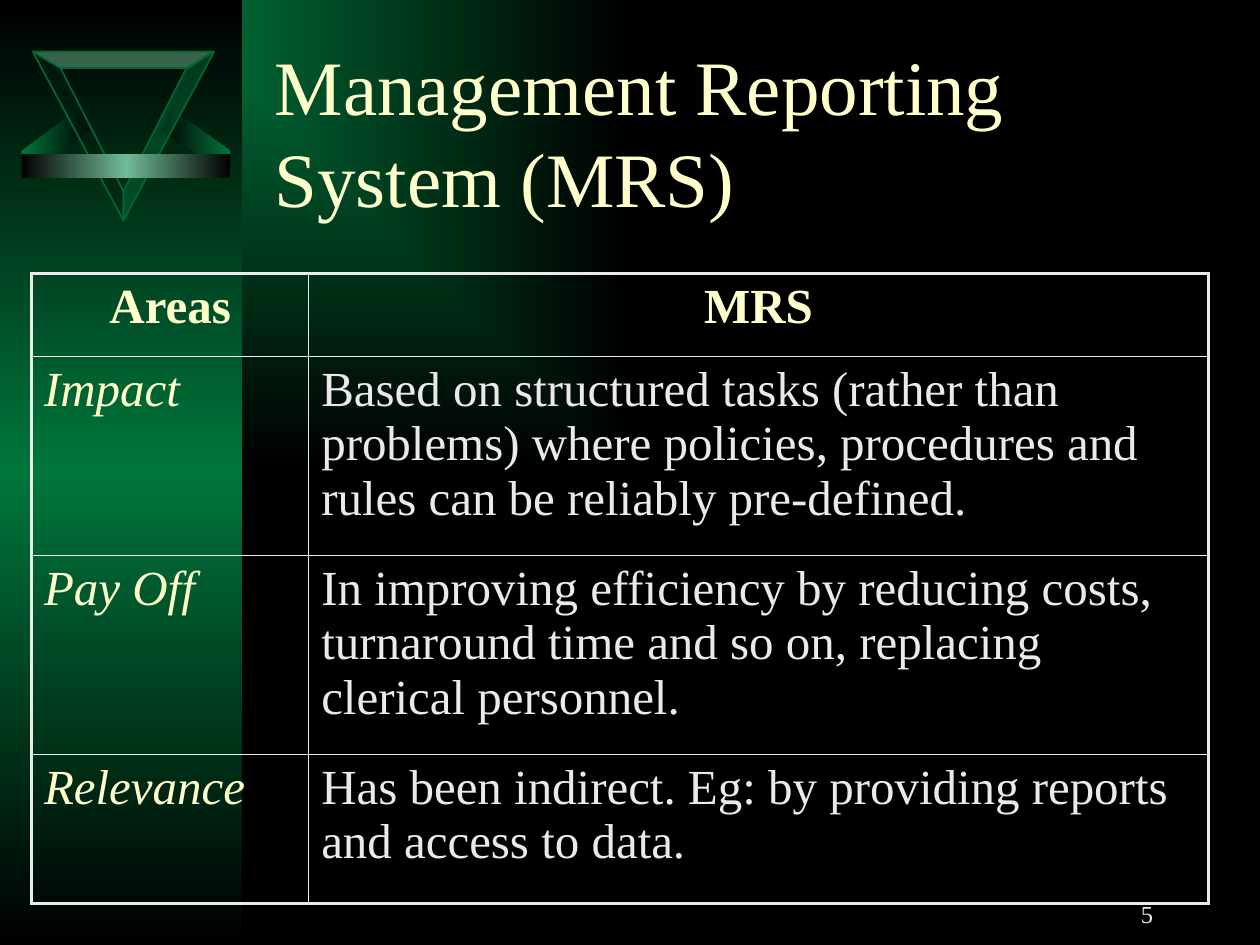
import dataclasses

import lxml.etree
import pptx
import pptx.dml.color
import pptx.enum.shapes
import pptx.enum.text
import pptx.oxml
import pptx.oxml.ns
import pptx.util

Inches = pptx.util.Inches
Pt = pptx.util.Pt
ALIGN = pptx.enum.text.PP_ALIGN
ANCHOR = pptx.enum.text.MSO_ANCHOR


@dataclasses.dataclass(frozen=True)
class Theme:
    font: str = "Times New Roman"
    black: str = "000000"
    green: str = "00763B"
    edge: str = "006633"
    shade: str = "002010"
    mint: str = "71BB96"
    cream: str = "FFFFCC"
    pale: str = "EAEAEA"
    title_size: int = 44
    table_size: int = 28
    number_size: int = 14
    frame_width: float = 2.25
    rule_width: float = 1


def rgb(color):
    return pptx.dml.color.RGBColor.from_string(color)


def mirror(points, axis):
    return [(round(2 * axis - x, 2), y) for x, y in points]


def set_gradient(solid, colors, direction):
    """Replace a solidFill element by evenly spaced colour stops."""
    step = 100000 // (len(colors) - 1)
    stops = "".join(
        f'<a:gs pos="{i * step}"><a:srgbClr val="{c}"/></a:gs>'
        for i, c in enumerate(colors)
    )
    solid.getparent().replace(solid, pptx.oxml.parse_xml(
        f'<a:gradFill {pptx.oxml.ns.nsdecls("a")} rotWithShape="1">'
        f"<a:gsLst>{stops}</a:gsLst>{direction}</a:gradFill>"
    ))


class Deck:
    """Holds the theme, the presentation and the current slide."""

    def __init__(self, theme):
        self.theme = theme
        self.prs = pptx.Presentation()
        self.prs.slide_width = Inches(10)
        self.prs.slide_height = Inches(7.5)
        self.s = self.prs.slides.add_slide(self.prs.slide_layouts[5])

    def background(self, colors):
        self.s.background.fill.solid()
        solid = self.s.element.xpath(".//p:bgPr/a:solidFill")[0]
        set_gradient(solid, colors, '<a:path path="rect">'
                     '<a:fillToRect r="100000" b="100000"/></a:path>')

    def add_text(self, tf, text, size, color, align=ALIGN.LEFT, bold=False, italic=False):
        p = tf.paragraphs[0]
        p.alignment = align
        r = p.add_run()
        r.text = text
        r.font.name = self.theme.font
        r.font.size = Pt(size)
        r.font.color.rgb = rgb(color)
        r.font.bold = bold
        r.font.italic = italic

    def paint_gradient(self, sp, colors, angle):
        sp.shadow.inherit = False
        sp.line.fill.background()
        sp.fill.solid()
        set_gradient(sp.element.spPr.find(pptx.oxml.ns.qn("a:solidFill")), colors,
                     f'<a:lin ang="{angle * 60000}" scaled="0"/>')

    def gradient_bar(self, shapes, box, colors, angle=0):
        sp = shapes.add_shape(pptx.enum.shapes.MSO_SHAPE.RECTANGLE,
                              *(Inches(v) for v in box))
        self.paint_gradient(sp, colors, angle)

    def outline(self, shapes, points):
        first, *rest = [(Inches(x), Inches(y)) for x, y in points]
        builder = shapes.build_freeform(*first)
        builder.add_line_segments(rest, close=True)
        return builder.convert_to_shape()

    def wing(self, shapes, points, colors):
        self.paint_gradient(self.outline(shapes, points), colors, 0)

    def glass(self, shapes, points, color):
        """Add a half-transparent facet with a thin edge."""
        sp = self.outline(shapes, points)
        sp.shadow.inherit = False
        sp.fill.solid()
        sp.fill.fore_color.rgb = rgb(color)
        clr = sp.element.spPr.xpath("./a:solidFill/a:srgbClr")[0]
        lxml.etree.SubElement(clr, pptx.oxml.ns.qn("a:alpha"), val="50000")
        sp.line.color.rgb = rgb(self.theme.edge)
        sp.line.width = Pt(1)

    def emblem(self):
        t = self.theme
        shapes = self.s.shapes.add_group_shape().shapes
        wing = [(0.17, 1.2), (0.17, 1.41), (0.72, 1.03), (0.72, 1.05), (0.64, 0.86)]
        side = [(0.98, 1.75), (0.98, 1.52), (0.48, 0.54), (0.26, 0.41)]
        top = [(0.26, 0.41), (0.48, 0.54), (1.5, 0.54), (1.69, 0.41)]
        self.wing(shapes, mirror(wing, 1), (t.black, t.green))
        self.wing(shapes, wing, (t.green, t.black))
        self.glass(shapes, side, t.shade)
        self.glass(shapes, top, t.mint)
        self.glass(shapes, mirror(side, 0.98), t.edge)
        self.gradient_bar(shapes, (0.17, 1.22, 1.66, 0.19), (t.black, t.mint, t.black))

    def title(self, text, box):
        sp = self.s.shapes.title
        sp.left, sp.top, sp.width, sp.height = (Inches(v) for v in box)
        tf = sp.text_frame
        tf.word_wrap = True
        tf.auto_size = pptx.enum.text.MSO_AUTO_SIZE.NONE
        tf.vertical_anchor = ANCHOR.MIDDLE
        self.add_text(tf, text, self.theme.title_size, self.theme.cream)

    def slide_number(self, text, box):
        tf = self.s.shapes.add_textbox(*(Inches(v) for v in box)).text_frame
        tf.word_wrap = True
        tf.vertical_anchor = ANCHOR.MIDDLE
        self.add_text(tf, text, self.theme.number_size, self.theme.pale, ALIGN.RIGHT)

    def borders(self, cell, outer):
        """Draw cell borders; outer maps each side to whether it is on the frame."""
        t = self.theme
        for side, on_frame in outer.items():
            width = Pt(t.frame_width if on_frame else t.rule_width)
            cell._tc.get_or_add_tcPr().append(pptx.oxml.parse_xml(
                f'<a:ln{side} {pptx.oxml.ns.nsdecls("a")} w="{width}"><a:solidFill>'
                f'<a:srgbClr val="{t.pale}"/></a:solidFill></a:ln{side}>'
            ))

    def table(self, rows, place, widths, heights):
        t = self.theme
        n_rows, n_cols = len(heights), len(widths)
        table = self.s.shapes.add_table(
            n_rows, n_cols, *(Inches(v) for v in place),
            Inches(sum(widths)), Inches(sum(heights))).table
        table.first_row = table.horz_banding = False
        for col, width in zip(table.columns, widths):
            col.width = Inches(width)
        for row, height in zip(table.rows, heights):
            row.height = Inches(height)
        for i, texts in enumerate(rows):
            for j, text in enumerate(texts):
                cell = table.cell(i, j)
                self.borders(cell, {"L": j == 0, "R": j == n_cols - 1,
                                    "T": i == 0, "B": i == n_rows - 1})
                cell.fill.background()
                head, label = i == 0, i > 0 and j == 0
                self.add_text(cell.text_frame, text, t.table_size,
                              t.cream if head or label else t.pale,
                              ALIGN.CENTER if head else ALIGN.LEFT, head, label)


def main():
    theme = Theme()
    deck = Deck(theme)
    deck.background((theme.green, theme.black))
    deck.gradient_bar(deck.s.shapes, (0, 0, 1.92, 7.5),
                      (theme.black, theme.green, theme.black), 90)
    deck.emblem()
    deck.slide_number("5", (7.17, 7, 2.08, 0.5))
    deck.title("Management Reporting System (MRS)", (2.08, 0.25, 7.75, 1.58))
    deck.table([
        ("Areas", "MRS"),
        ("Impact", "Based on structured tasks (rather than problems) where policies, "
                   "procedures and rules can be reliably pre-defined."),
        ("Pay Off", "In improving efficiency by reducing costs, turnaround time "
                    "and so on, replacing clerical personnel."),
        ("Relevance", "Has been indirect. Eg: by providing reports and access to data."),
    ], (0.25, 2.17), (2.2, 7.14), (0.66, 1.58, 1.58, 1.18))
    deck.prs.save("out.pptx")


if __name__ == "__main__":
    main()
